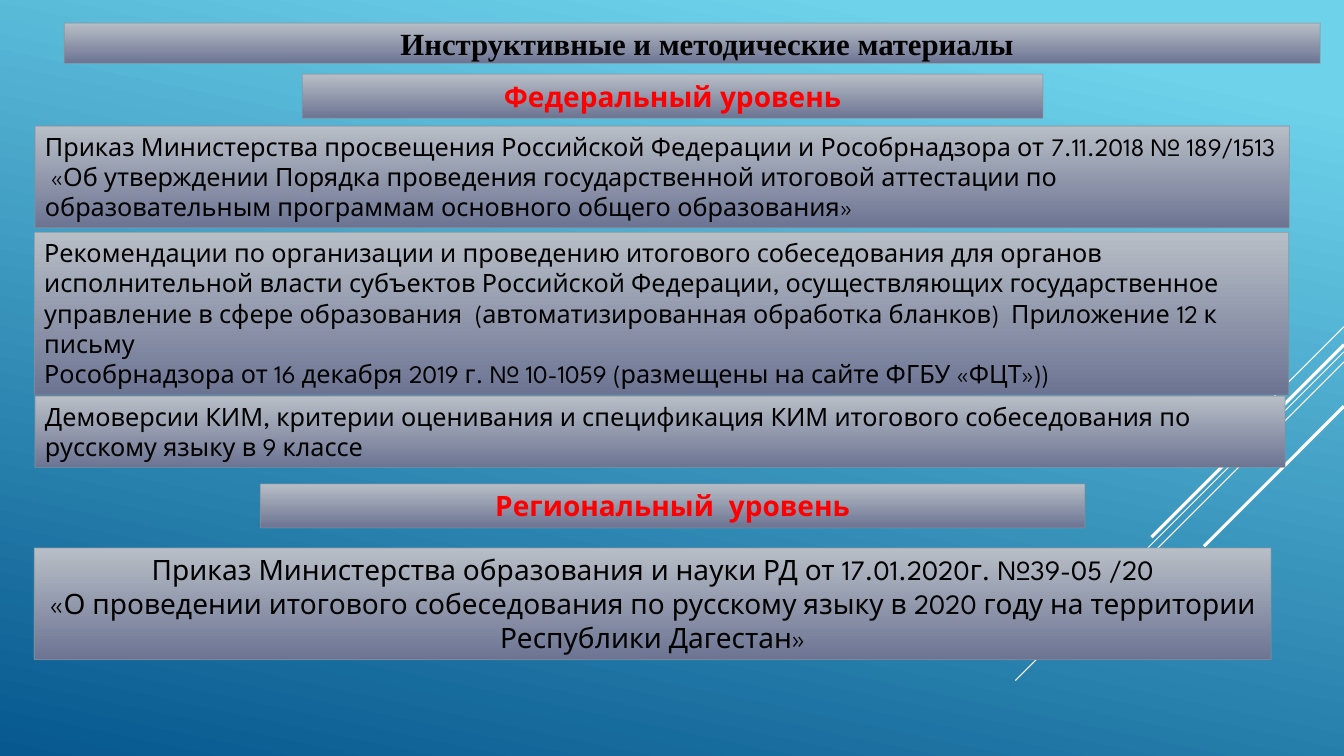
from lxml.etree import SubElement
from pptx import Presentation
from pptx.dml.color import RGBColor
from pptx.enum.shapes import MSO_CONNECTOR, MSO_SHAPE
from pptx.enum.text import MSO_ANCHOR as Anchor, MSO_AUTO_SIZE as AutoSize, PP_ALIGN as Align
from pptx.oxml.ns import qn
from pptx.util import Pt

SLIDE_WIDTH, SLIDE_HEIGHT = 960, 540
BODY = {"name": "League Spartan", "size": Pt(18), "bold": False}
ORDER = BODY | {"size": Pt(20)}
LEVEL = ORDER | {"bold": True}
TITLE = {"name": "Times New Roman", "size": Pt(22), "bold": True}

# Start height on the right edge, diagonal run, line width
RAYS = [
    (233.3, 72, 0.75),
    (251.3, 234.7, 0.75),
    (258.5, 149, 0.75),
    (246.2, 137.5, 2.25),
    (290.2, 100, 2.25),
]


def color(hex_string):
    return RGBColor.from_string(hex_string)


def apply(target, values):
    for name, value in values.items():
        setattr(target, name, value)


def fill_gradient(fill, clockwise_angle, *stops):
    fill.gradient()
    fill.gradient_angle = 360 - clockwise_angle
    for stop, (position, hex_string) in zip(fill.gradient_stops, stops):
        stop.position = position
        stop.color.rgb = color(hex_string)


def add_ray(slide, top, run, width):
    """Draw a white diagonal falling left from the right edge."""
    ray = slide.shapes.add_connector(
        MSO_CONNECTOR.STRAIGHT,
        Pt(SLIDE_WIDTH), Pt(top), Pt(SLIDE_WIDTH - run), Pt(top + run),
    )
    ray.line.color.rgb = color("FFFFFF")
    ray.line.width = Pt(width)
    SubElement(ray._element.spPr, qn("a:effectLst"))


def add_panel(slide, box, paragraphs, font, ink="000000", align=Align.LEFT, **frame_values):
    panel = slide.shapes.add_shape(MSO_SHAPE.RECTANGLE, *map(Pt, box))
    panel.shadow.inherit = False
    fill_gradient(panel.fill, 90, (0, "B8BEC6"), (1, "6C7493"))
    panel.line.color.rgb = color("89919C")
    panel.line.width = Pt(0.75)
    outline_color = panel.line._ln.find(".//" + qn("a:srgbClr"))
    SubElement(outline_color, qn("a:alpha"), val="60000")

    frame = panel.text_frame
    defaults = {
        "word_wrap": True,
        "vertical_anchor": Anchor.TOP,
        "auto_size": AutoSize.SHAPE_TO_FIT_TEXT,
    }
    apply(frame, defaults | frame_values)
    for index, text in enumerate(paragraphs):
        paragraph = frame.add_paragraph() if index else frame.paragraphs[0]
        paragraph.alignment = align
        run = paragraph.add_run()
        run.text = text
        apply(run.font, font)
        run.font.color.rgb = color(ink)


def add_level(slide, box, text):
    add_panel(slide, box, [text], LEVEL, "FF0000", Align.CENTER)


def main():
    deck = Presentation()
    apply(deck, {"slide_width": Pt(SLIDE_WIDTH), "slide_height": Pt(SLIDE_HEIGHT)})
    slide = deck.slides.add_slide(deck.slide_layouts[6])
    fill_gradient(slide.background.fill, 102, (0.1, "6ED2EB"), (1, "06588E"))
    for ray in RAYS:
        add_ray(slide, *ray)

    add_panel(
        slide, (46, 16.5, 897, 28.8), ["Инструктивные и методические материалы"],
        TITLE, align=Align.CENTER, vertical_anchor=Anchor.MIDDLE,
        auto_size=AutoSize.NONE, margin_left=Pt(28),
    )

    add_level(slide, (216, 53, 529, 31.5), "Федеральный уровень")
    add_panel(slide, (25, 90, 896, 72.7), [
        "Приказ Министерства просвещения Российской Федерации и Рособрнадзора "
        "от 7.11.2018 № 189/1513  «Об утверждении Порядка проведения государственной "
        "итоговой аттестации по образовательным программам основного общего образования»",
    ], BODY)
    add_panel(slide, (24.5, 166, 896, 116.3), [
        "Рекомендации по организации и проведению итогового собеседования для органов "
        "исполнительной власти субъектов Российской Федерации, осуществляющих "
        "государственное управление в сфере образования  (автоматизированная обработка "
        "бланков)  Приложение 12 к письму",
        "Рособрнадзора от 16 декабря 2019 г. № 10-1059 (размещены на сайте ФГБУ «ФЦТ»))",
    ], BODY)
    add_panel(slide, (25, 283, 893, 50.9), [
        "Демоверсии КИМ, критерии оценивания и спецификация КИМ итогового "
        "собеседования по русскому языку в 9 классе",
    ], BODY)

    add_level(slide, (186, 345.6, 589, 31.5), "Региональный  уровень")
    add_panel(slide, (24.5, 391.3, 883.5, 79.9), [
        "Приказ Министерства образования и науки РД от 17.01.2020г. №39-05 /20",
        "«О проведении итогового собеседования по русскому языку в 2020 году "
        "на территории Республики Дагестан»",
    ], ORDER, align=Align.CENTER)

    deck.save("out.pptx")


if __name__ == "__main__":
    main()
